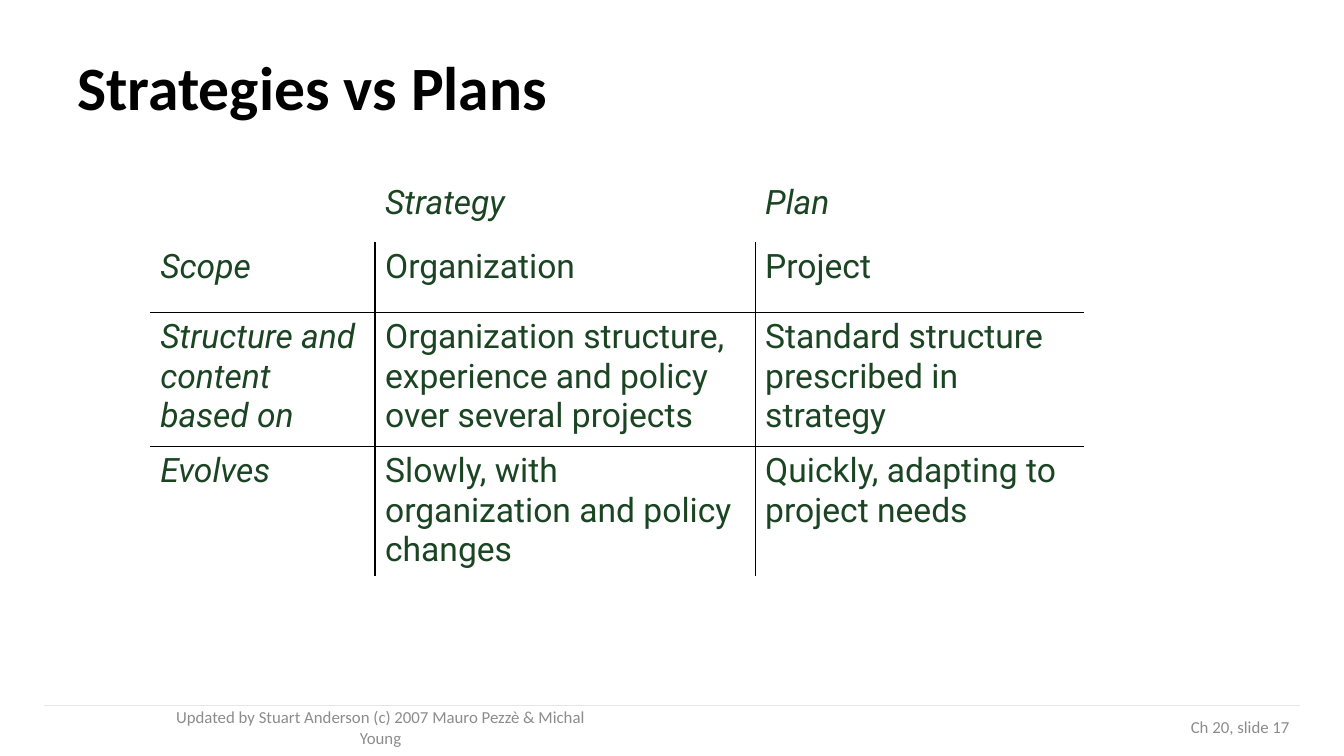
"""Builds the slide that compares strategies with plans in a ruled table."""
from dataclasses import dataclass

from lxml.etree import SubElement
from pptx import Presentation
from pptx.dml.color import RGBColor
from pptx.enum.shapes import MSO_CONNECTOR as Connector
from pptx.enum.text import MSO_ANCHOR as Anchor, PP_ALIGN as Align
from pptx.oxml.ns import qn
from pptx.slide import Slide
from pptx.table import _Cell as Cell
from pptx.text.text import _Paragraph as Paragraph
from pptx.util import Inches, Pt

COLORS = {
    "title": "000000",
    "body": "1A4422",
    "footer": "8C8C8C",
    "footer_rule": "E7E6E6",
    "grid": "000000",
}
COLUMN_WIDTHS = (2.23, 3.77, 3.26)
ROW_HEIGHTS = (0.63, 0.7, 1.33, 1.28)
ROWS = (
    ("", "Strategy", "Plan"),
    ("Scope", "Organization", "Project"),
    (
        "Structure and content based on",
        "Organization structure, experience and policy over several projects",
        "Standard structure prescribed in strategy",
    ),
    (
        "Evolves",
        "Slowly, with organization and policy changes",
        "Quickly, adapting to project needs",
    ),
)


@dataclass(frozen=True)
class TextStyle:
    font: str
    size: float
    color: str
    bold: bool = False
    italic: bool = False


@dataclass(frozen=True)
class Label:
    text: str
    left: float
    top: float
    width: float
    height: float
    style: TextStyle
    align: Align = Align.LEFT
    line_spacing: float = 1.0


TITLE = TextStyle("Calibri", 44, "title", bold=True)
FOOTER = TextStyle("Calibri", 12, "footer")
BODY = TextStyle("Roboto", 24, "body")
HEADING = TextStyle("Roboto", 24, "body", italic=True)

LABELS = (
    Label("Strategies vs Plans", 0.67, 0.3, 12, 1.2, TITLE, line_spacing=0.9),
    Label(
        "Updated by Stuart Anderson (c) 2007 Mauro Pezzè & Michal Young",
        1.44, 7.08, 4.67, 0.27, FOOTER, Align.CENTER,
    ),
    Label("Ch 20, slide 17", 9.78, 7.08, 3.11, 0.27, FOOTER, Align.RIGHT),
)


def add_span(para: Paragraph, text: str, style: TextStyle) -> None:
    span = para.add_run()
    span.text = text
    span.font.name = style.font
    span.font.size = Pt(style.size)
    span.font.bold = style.bold
    span.font.italic = style.italic
    span.font.color.rgb = RGBColor.from_string(COLORS[style.color])


def add_label(page: Slide, label: Label) -> None:
    box = page.shapes.add_textbox(
        Inches(label.left), Inches(label.top), Inches(label.width), Inches(label.height)
    )
    frame = box.text_frame
    frame.word_wrap = True
    frame.vertical_anchor = Anchor.MIDDLE
    para = frame.paragraphs[0]
    para.alignment = label.align
    para.line_spacing = label.line_spacing
    add_span(para, label.text, label.style)


def add_footer_rule(page: Slide) -> None:
    rule = page.shapes.add_connector(
        Connector.STRAIGHT, Inches(0.44), Inches(7), Inches(12.89), Inches(7)
    )
    rule.line.color.rgb = RGBColor.from_string(COLORS["footer_rule"])
    rule.line.width = Pt(0.75)
    SubElement(rule._element.spPr, qn("a:effectLst"))


def set_borders(cell: Cell, sides: dict[str, bool]) -> None:
    properties = cell._tc.get_or_add_tcPr()
    for side, visible in sides.items():
        border = SubElement(properties, qn(f"a:ln{side}"), w=str(Pt(1)))
        if visible:
            fill = SubElement(border, qn("a:solidFill"))
            SubElement(fill, qn("a:srgbClr"), val=COLORS["grid"])
        else:
            SubElement(border, qn("a:noFill"))


def add_comparison(page: Slide) -> None:
    last_row, last_column = len(ROWS) - 1, len(COLUMN_WIDTHS) - 1
    table = page.shapes.add_table(
        len(ROWS), len(COLUMN_WIDTHS), Inches(1.49), Inches(1.77),
        Inches(sum(COLUMN_WIDTHS)), Inches(sum(ROW_HEIGHTS)),
    ).table
    table.first_row = table.horz_banding = False
    for column, width in zip(table.columns, COLUMN_WIDTHS):
        column.width = Inches(width)
    for row, height in zip(table.rows, ROW_HEIGHTS):
        row.height = Inches(height)
    for r, texts in enumerate(ROWS):
        for c, text in enumerate(texts):
            cell = table.cell(r, c)
            set_borders(cell, {
                "L": r > 0 and c > 0,
                "R": r > 0 and c < last_column,
                "T": r > 1,
                "B": 0 < r < last_row,
            })
            cell.fill.background()
            if text:
                style = HEADING if r == 0 or c == 0 else BODY
                add_span(cell.text_frame.paragraphs[0], text, style)


def main() -> None:
    deck = Presentation()
    deck.slide_width, deck.slide_height = Inches(13.33), Inches(7.5)
    page = deck.slides.add_slide(deck.slide_layouts[6])
    add_footer_rule(page)
    add_comparison(page)
    for label in LABELS:
        add_label(page, label)
    deck.save("out.pptx")


if __name__ == "__main__":
    main()
